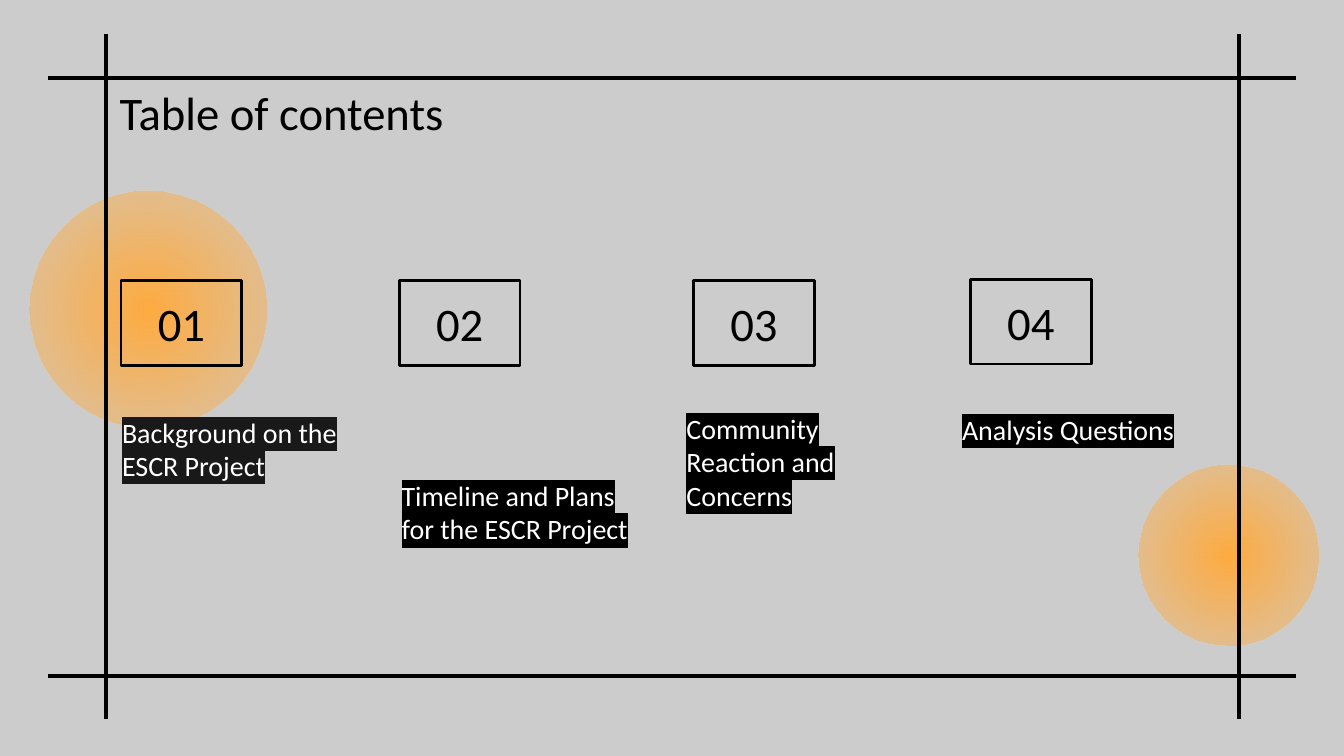
from dataclasses import dataclass

from lxml import etree
from pptx import Presentation
from pptx.dml.color import RGBColor
from pptx.enum.shapes import MSO_CONNECTOR, MSO_SHAPE
from pptx.enum.text import MSO_ANCHOR, MSO_AUTO_SIZE, PP_ALIGN
from pptx.oxml import parse_xml
from pptx.oxml.ns import nsdecls, qn
from pptx.util import Inches, Pt

LINE = MSO_CONNECTOR.STRAIGHT
RECT, OVAL = MSO_SHAPE.RECTANGLE, MSO_SHAPE.OVAL
MIDDLE, BOTTOM = MSO_ANCHOR.MIDDLE, MSO_ANCHOR.BOTTOM
LEFT, CENTER = PP_ALIGN.LEFT, PP_ALIGN.CENTER
NO_FIT = MSO_AUTO_SIZE.NONE


@dataclass(frozen=True)
class Theme:
    font: str = "Calibri"
    heading: int = 25
    label: int = 15
    background: str = "CCCCCC"
    ink: str = "000000"
    soft_ink: str = "191919"
    paper: str = "FFFFFF"
    glow: str = "FFAB40"
    frame_width: float = 2.25
    box_width: float = 1.5


def rgb(value):
    return RGBColor.from_string(value)


def write(s, text, *, font, size, color, align=LEFT, anchor=MIDDLE, highlight=None):
    tf = s.text_frame
    tf.word_wrap = True
    tf.auto_size = NO_FIT
    tf.vertical_anchor = anchor
    tf.margin_left = tf.margin_right = Inches(0.1)
    tf.margin_top = tf.margin_bottom = Inches(0.1)
    p = tf.paragraphs[0]
    p.alignment = align
    r = p.add_run()
    r.text = text
    r.font.size = Pt(size)
    r.font.color.rgb = rgb(color)
    if highlight:
        mark = etree.SubElement(r.font._element, qn("a:highlight"))
        etree.SubElement(mark, qn("a:srgbClr"), val=highlight)
    r.font.name = font


class Deck:
    def __init__(self, prs, theme):
        self.theme = theme
        self.slide = prs.slides.add_slide(prs.slide_layouts[5])
        fill = self.slide.background.fill
        fill.solid()
        fill.fore_color.rgb = rgb(theme.background)

    def glow(self, x, y, size):
        """Add a circle that fades from its centre outwards."""
        s = self.slide.shapes.add_shape(OVAL, *map(Inches, (x, y, size, size)))
        s.shadow.inherit = False
        s.line.fill.background()
        color = self.theme.glow
        s._element.spPr.find(qn("a:prstGeom")).addnext(parse_xml(
            f'<a:gradFill {nsdecls("a")} rotWithShape="1"><a:gsLst>'
            f'<a:gs pos="0"><a:srgbClr val="{color}"/></a:gs>'
            f'<a:gs pos="100000"><a:srgbClr val="{color}">'
            '<a:alpha val="22000"/></a:srgbClr></a:gs></a:gsLst>'
            '<a:path path="circle"><a:fillToRect l="50000" t="50000" '
            'r="50000" b="50000"/></a:path></a:gradFill>'))

    def rule(self, x1, y1, x2, y2):
        s = self.slide.shapes.add_connector(LINE, *map(Inches, (x1, y1, x2, y2)))
        s.line.color.rgb = rgb(self.theme.ink)
        s.line.width = Pt(self.theme.frame_width)
        etree.SubElement(s._element.spPr, qn("a:effectLst"))

    def title(self, text, x, y, w, h):
        s = self.slide.shapes.title
        s.left, s.top, s.width, s.height = map(Inches, (x, y, w, h))
        t = self.theme
        write(s, text, font=t.font, size=t.heading, color=t.ink)

    def number(self, text, x, y):
        s = self.slide.shapes.add_shape(RECT, *map(Inches, (x, y, 0.9, 0.63)))
        t = self.theme
        s.shadow.inherit = False
        s.fill.background()
        s.line.color.rgb = rgb(t.ink)
        s.line.width = Pt(t.box_width)
        write(s, text, font=t.font, size=t.heading, color=t.ink, align=CENTER)

    def label(self, text, x, y, w, h, highlight):
        s = self.slide.shapes.add_textbox(*map(Inches, (x, y, w, h)))
        t = self.theme
        write(s, text, font=t.font, size=t.label, color=t.paper,
              anchor=BOTTOM, highlight=highlight)


def main():
    prs = Presentation()
    prs.slide_width = Inches(10)
    prs.slide_height = prs.slide_width * 9 // 16
    theme = Theme()
    deck = Deck(prs, theme)

    deck.glow(8.47, 3.46, 1.34)
    deck.glow(0.22, 1.42, 1.76)
    for x in (0.79, 9.22):
        deck.rule(x, 0.25, x, 5.35)
    for y in (0.58, 5.03):
        deck.rule(0.36, y, 9.64, y)

    deck.title("Table of contents", 0.79, 0.59, 6.63, 0.49)

    # Number box position, label text, label box, label highlight
    sections = [
        (0.9, 2.09, "Background on the ESCR Project",
         (0.81, 3.06, 2.08, 0.63), theme.soft_ink),
        (2.97, 2.09, "Timeline and Plans for the ESCR Project",
         (2.89, 3.53, 1.93, 0.63), theme.ink),
        (5.16, 2.09, "Community Reaction and Concerns",
         (5.01, 2.96, 1.7, 0.95), theme.ink),
        (7.22, 2.08, "Analysis Questions",
         (7.06, 2.79, 2.08, 0.63), theme.ink),
    ]
    for i, (x, y, text, box, highlight) in enumerate(sections, 1):
        deck.number(f"{i:02}", x, y)
        deck.label(text, *box, highlight)

    prs.save("out.pptx")


if __name__ == "__main__":
    main()
